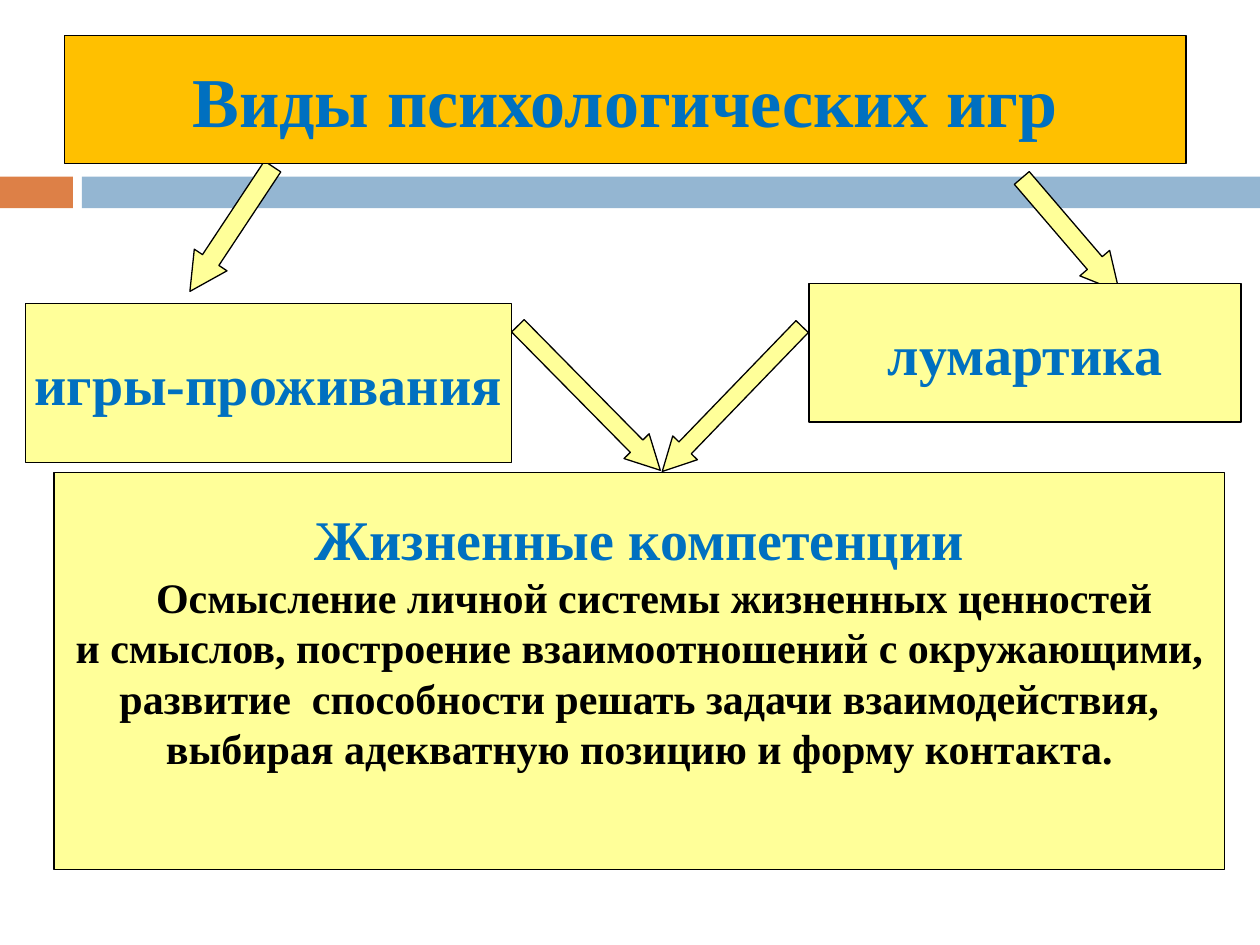
from pptx import Presentation
from pptx.dml.color import RGBColor
from pptx.enum.shapes import MSO_SHAPE
from pptx.enum.text import MSO_ANCHOR, PP_ALIGN
from pptx.util import Cm, Pt

RECTANGLE = MSO_SHAPE.RECTANGLE
ARROW = MSO_SHAPE.RIGHT_ARROW
MIDDLE = MSO_ANCHOR.MIDDLE
CENTER = PP_ALIGN.CENTER

FONT = "Times New Roman"
YELLOW, GOLD, BLUE, BLACK = "FFFF99", "FFC000", "0070C0", "000000"

# Places are left, top, width, height in centimetres.
BARS = [
    ((0, 3.56, 1.47, 0.64), "DD8047"),
    ((1.65, 3.56, 23.75, 0.64), "94B6D2"),
]
# Place, rotation in degrees
UPPER_ARROWS = [
    ((3.15, 4.22, 3.02, 0.79), 123.5),
    ((20.07, 4.34, 3.02, 0.79), 49.4),
]
LOWER_ARROWS = [
    ((12.73, 7.7, 4.06, 0.69), 134),
    ((9.83, 7.67, 4.09, 0.71), 45.4),
]
# Place, fill, bottom inset, paragraphs of (text, size, colour, left indent)
BOXES = [
    ((1.3, 0.71, 22.61, 2.59), GOLD, 0.13,
     [("Виды психологических игр", 40, BLUE, 0)]),
    ((0.51, 6.12, 9.8, 3.2), YELLOW, 0.13,
     [("игры-проживания", 32, BLUE, 0)]),
    ((16.31, 5.72, 8.71, 2.79), YELLOW, 0.13,
     [("лумартика", 32, BLUE, 0)]),
    ((1.09, 9.53, 23.6, 8), YELLOW, 1.43, [
        ("Жизненные компетенции", 32, BLUE, 0),
        ("Осмысление личной системы жизненных ценностей", 24, BLACK, 0.6),
        ("и смыслов, построение взаимоотношений с окружающими,", 24, BLACK, 0),
        ("развитие  способности решать задачи взаимодействия,", 24, BLACK, 0),
        ("выбирая адекватную позицию и форму контакта.", 24, BLACK, 0),
    ]),
]


def color(value):
    return RGBColor.from_string(value)


def set_all(target, values):
    for name, value in values.items():
        setattr(target, name, value)


def add_shape(page, kind, place, fill, outlined=True):
    shape = page.shapes.add_shape(kind, *map(Cm, place))
    shape.shadow.inherit = False
    shape.fill.solid()
    shape.fill.fore_color.rgb = color(fill)
    if outlined:
        shape.line.color.rgb = color(BLACK)
        shape.line.width = Pt(0.75)
    else:
        shape.line.fill.background()
    return shape


def add_arrows(page, arrows):
    for place, rotation in arrows:
        arrow = add_shape(page, ARROW, place, YELLOW)
        arrow.rotation = rotation
        arrow.adjustments[1] = 0.96


def write_text(frame, bottom, paragraphs):
    set_all(frame, {
        "word_wrap": True, "vertical_anchor": MIDDLE,
        "margin_left": 0, "margin_right": 0, "margin_bottom": Cm(bottom),
    })
    for index, (text, size, ink, indent) in enumerate(paragraphs):
        para = frame.add_paragraph() if index else frame.paragraphs[0]
        para.alignment = CENTER
        if indent:
            para._p.get_or_add_pPr().set("marL", str(Cm(indent)))
        span = para.add_run()
        span.text = text
        set_all(span.font, {"name": FONT, "size": Pt(size), "bold": True})
        span.font.color.rgb = color(ink)


def main():
    deck = Presentation()
    set_all(deck, {"slide_width": Cm(25.4), "slide_height": Cm(19.05)})
    page = deck.slides.add_slide(deck.slide_layouts[6])

    for place, fill in BARS:
        add_shape(page, RECTANGLE, place, fill, outlined=False)
    add_arrows(page, UPPER_ARROWS)
    for place, fill, bottom, paragraphs in BOXES:
        box = add_shape(page, RECTANGLE, place, fill)
        write_text(box.text_frame, bottom, paragraphs)
    add_arrows(page, LOWER_ARROWS)

    deck.save("out.pptx")


if __name__ == "__main__":
    main()
